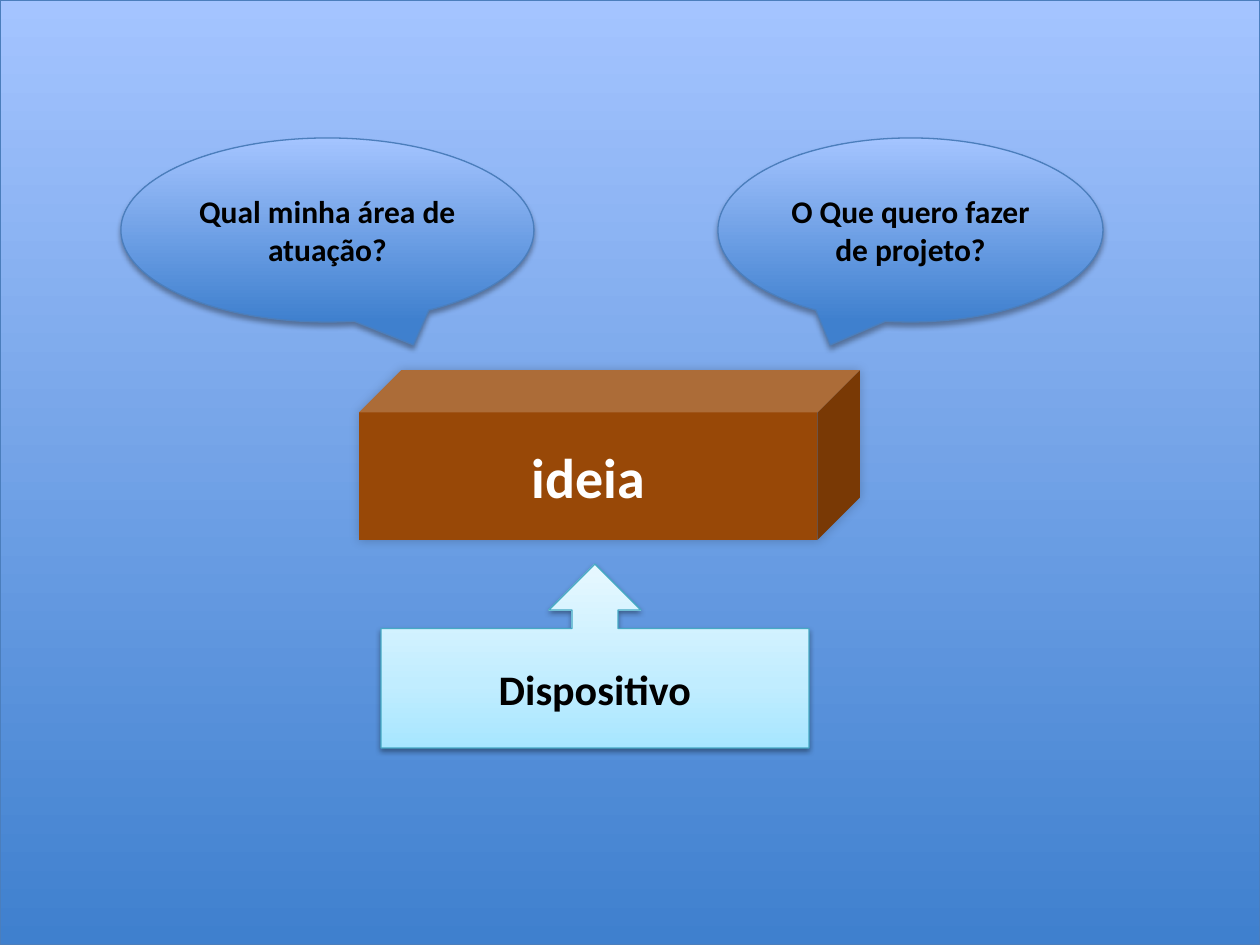
import copy

import lxml.etree
import pptx
import pptx.dml.color
import pptx.enum.shapes
import pptx.enum.text
import pptx.oxml.ns
import pptx.util

EMU_PER_PX = 914400 / 126
SLIDE_SIZE = (1260, 945)
KIND = pptx.enum.shapes.MSO_SHAPE

# Gradient stops run from bottom to top; shadow: opacity %, blur pt, distance pt, angle
BLUE = {
    "stops": [(0, "3F80CE"), (1, "A4C4FF")],
    "line": "4B7EBC",
    "shadow": (35, 3.1, 1.8, 90),
}
AQUA = {
    "stops": [(0, "A7E6FF"), (0.35, "C1EDFF"), (1, "E7F8FF")],
    "line": "46AAC5",
    "shadow": (38, 3.1, 1.6, 90),
}
BROWN = {"fill": "984807", "shadow": (20, 6, 0, 315)}

SHAPES = [
    {"kind": KIND.RECTANGLE, "at": (0, 0, *SLIDE_SIZE), "style": BLUE},
    {"kind": KIND.CUBE, "at": (359, 370, 501, 170), "style": BROWN,
     "text": "ideia", "size": 32, "color": "FFFFFF"},
    {"kind": KIND.OVAL_CALLOUT, "at": (718, 138, 385, 184), "style": BLUE,
     "text": "O Que quero fazer de projeto?", "size": 18},
    {"kind": KIND.OVAL_CALLOUT, "at": (121, 138, 413, 184), "style": BLUE,
     "text": "Qual minha área de atuação?", "size": 18, "mirrored": True},
    {"kind": KIND.UP_ARROW_CALLOUT, "at": (381, 564, 428, 184), "style": AQUA,
     "text": "Dispositivo", "size": 24},
]


def px(length):
    return pptx.util.Emu(round(length * EMU_PER_PX))


def rgb(color):
    return pptx.dml.color.RGBColor.from_string(color)


def fill_gradient(shape, stops):
    shape.fill.gradient()
    shape.fill.gradient_angle = 90
    stop_list = shape._element.spPr.find(".//" + pptx.oxml.ns.qn("a:gsLst"))
    while len(stop_list) < len(stops):
        stop_list.append(copy.deepcopy(stop_list[-1]))
    for stop, (position, color) in zip(shape.fill.gradient_stops, stops):
        stop.position = position
        stop.color.rgb = rgb(color)


def add_shadow(shape, opacity, blur, distance, angle):
    shape.shadow.inherit = False
    qn = pptx.oxml.ns.qn
    effects = shape._element.spPr.find(qn("a:effectLst"))
    shadow = lxml.etree.SubElement(
        effects, qn("a:outerShdw"), blurRad=str(pptx.util.Pt(blur)),
        dist=str(pptx.util.Pt(distance)), dir=str(angle * 60000), rotWithShape="0")
    color = lxml.etree.SubElement(shadow, qn("a:srgbClr"), val="000000")
    lxml.etree.SubElement(color, qn("a:alpha"), val=str(opacity * 1000))


def write_text(shape, text, size, color="000000"):
    frame = shape.text_frame
    frame.word_wrap = True
    frame.vertical_anchor = pptx.enum.text.MSO_ANCHOR.MIDDLE
    para = frame.paragraphs[0]
    para.alignment = pptx.enum.text.PP_ALIGN.CENTER
    span = para.add_run()
    span.text = text
    span.font.name = "Calibri"
    span.font.size = pptx.util.Pt(size)
    span.font.bold = True
    span.font.color.rgb = rgb(color)


def add_styled_shape(page, kind, at, style, mirrored=False):
    shape = page.shapes.add_shape(kind, *map(px, at))
    if mirrored:
        shape._element.spPr.xfrm.set("flipH", "1")
    if "stops" in style:
        fill_gradient(shape, style["stops"])
    else:
        shape.fill.solid()
        shape.fill.fore_color.rgb = rgb(style["fill"])
    if "line" in style:
        shape.line.color.rgb = rgb(style["line"])
        shape.line.width = pptx.util.Pt(0.75)
    else:
        shape.line.fill.background()
    add_shadow(shape, *style["shadow"])
    return shape


def main():
    deck = pptx.Presentation()
    deck.slide_width, deck.slide_height = map(px, SLIDE_SIZE)
    page = deck.slides.add_slide(deck.slide_layouts[6])
    for item in SHAPES:
        shape = add_styled_shape(page, item["kind"], item["at"], item["style"],
                                 item.get("mirrored", False))
        if "text" in item:
            write_text(shape, item["text"], item["size"], item.get("color", "000000"))
    deck.save("out.pptx")


if __name__ == "__main__":
    main()
